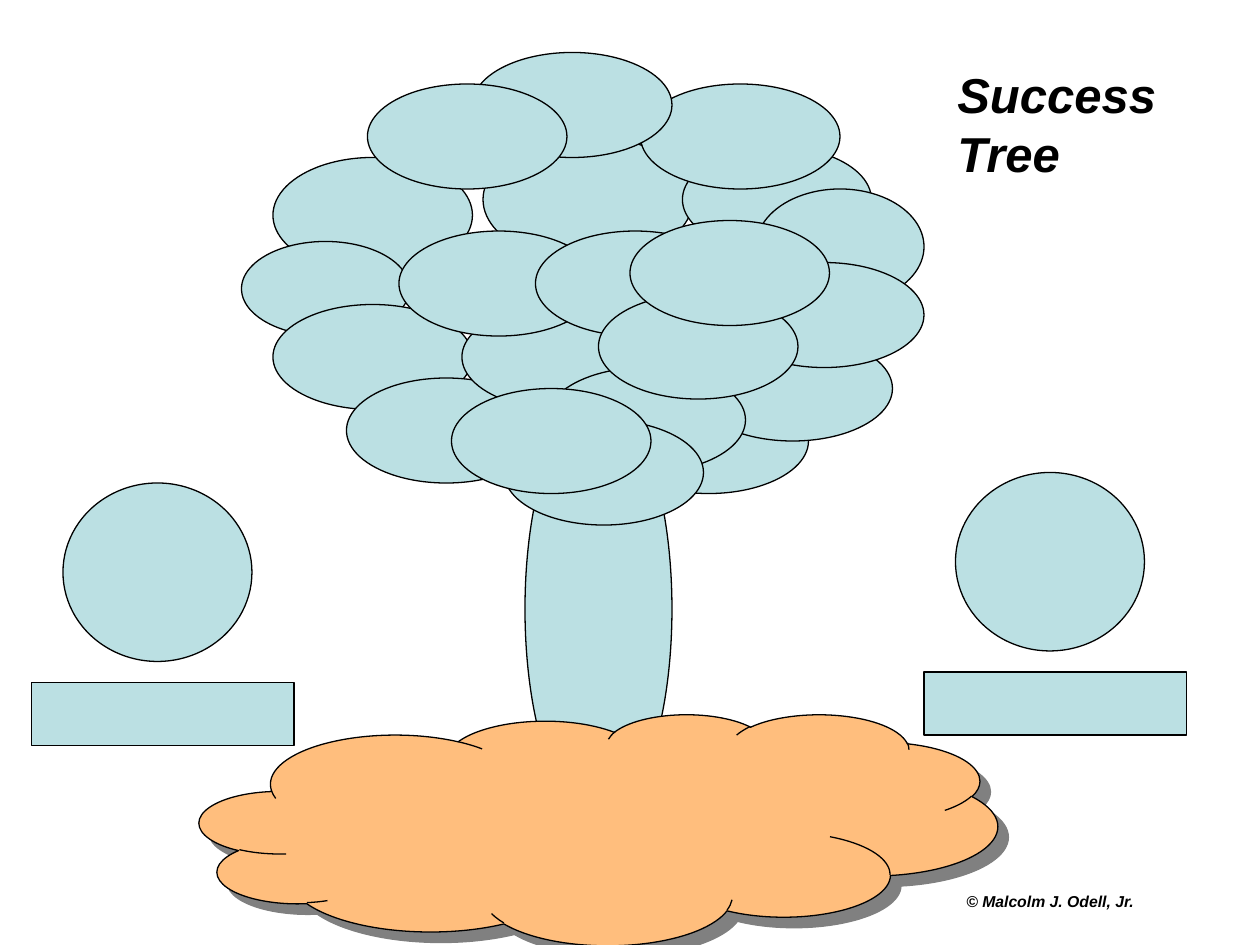
from lxml import etree
from pptx import Presentation
from pptx import util as u
from pptx.dml.color import RGBColor
from pptx.enum import shapes, text
from pptx.oxml.ns import qn

PX = 9525  # EMU per px, 96 px to the inch
COLORS = {"leaf": "BBE0E3", "ground": "FFBE7D", "ink": "000000", "shadow": "808080"}
FONT = "Arial"
LEAF_SIZE = (152, 80)


def write(shape, content, size, bold=True, italic=True, color="ink",
          align=text.PP_ALIGN.LEFT, anchor=text.MSO_ANCHOR.TOP):
    frame = shape.text_frame
    frame.word_wrap = True
    frame.vertical_anchor = anchor
    paragraph = frame.paragraphs[0]
    paragraph.text = content
    paragraph.alignment = align
    for run in paragraph.runs:
        font = run.font
        font.name, font.size = FONT, u.Pt(size)
        font.bold, font.italic = bold, italic
        font.color.rgb = RGBColor.from_string(COLORS[color])


class Sketch:
    """Holds the drawing style and the current slide."""

    def __init__(self, slide, line_width=0.75):
        self.slide = slide
        self.line_width = line_width

    def shape(self, kind, left, top, width, height, fill="leaf"):
        box = [v * PX for v in (left, top, width, height)]
        shape = self.slide.shapes.add_shape(kind, *box)
        shape.fill.solid()
        shape.fill.fore_color.rgb = RGBColor.from_string(COLORS[fill])
        shape.line.color.rgb = RGBColor.from_string(COLORS["ink"])
        shape.line.width = u.Pt(self.line_width)
        shape.shadow.inherit = False
        return shape

    def ellipse(self, *box):
        return self.shape(shapes.MSO_SHAPE.OVAL, *box)

    def rectangle(self, *box):
        return self.shape(shapes.MSO_SHAPE.RECTANGLE, *box)

    def cloud(self, *box):
        cloud = self.shape(shapes.MSO_SHAPE.CLOUD, *box, fill="ground")
        effects = cloud._element.spPr.find(qn("a:effectLst"))
        shadow = etree.SubElement(effects, qn("a:outerShdw"), dist=str(u.Pt(8.5)),
                                  dir="2700000", algn="ctr", rotWithShape="0")
        etree.SubElement(shadow, qn("a:srgbClr"), val=COLORS["shadow"])
        return cloud

    def label(self, content, left, top, width, height, **style):
        box = [v * PX for v in (left, top, width, height)]
        label = self.slide.shapes.add_textbox(*box)
        write(label, content, **style)
        return label


def main():
    presentation = Presentation()
    presentation.slide_width, presentation.slide_height = 960 * PX, 720 * PX
    sketch = Sketch(presentation.slides.add_slide(presentation.slide_layouts[6]))

    # Credit, on the last line of its box
    credit = sketch.label("© Malcolm J. Odell, Jr.", 648, 656, 304, 50, size=9,
                          align=text.PP_ALIGN.CENTER)
    credit.text_frame.margin_top = 33 * PX
    credit.text_frame.margin_bottom = 0

    # Crown centre and trunk
    sketch.ellipse(368, 104, 160, 96)
    sketch.ellipse(400, 304, 112, 320)

    # Outer leaves of various sizes
    for box in [(208, 120, 152, 88), (520, 112, 144, 80),
                (576, 144, 128, 88), (184, 184, 128, 72)]:
        sketch.ellipse(*box)

    # Leaves of one size, from back to front
    for left, top in [(208, 232), (264, 288), (352, 232), (304, 176), (408, 176),
                      (464, 296), (528, 256), (552, 200), (416, 280), (488, 64),
                      (360, 40), (280, 64), (384, 320), (344, 296), (456, 224),
                      (480, 168)]:
        sketch.ellipse(left, top, *LEAF_SIZE)

    # Ground
    sketch.cloud(152, 544, 608, 176)

    # Circle above a plate on each side
    for left, top in [(704, 360), (24, 368)]:
        sketch.ellipse(left + 24, top, 144, 136)
        sketch.rectangle(left, top + 152, 200, 48)

    # Title
    sketch.label("Success\vTree", 720, 40, 176, 108, size=28,
                 anchor=text.MSO_ANCHOR.MIDDLE)

    presentation.save("out.pptx")


if __name__ == "__main__":
    main()
